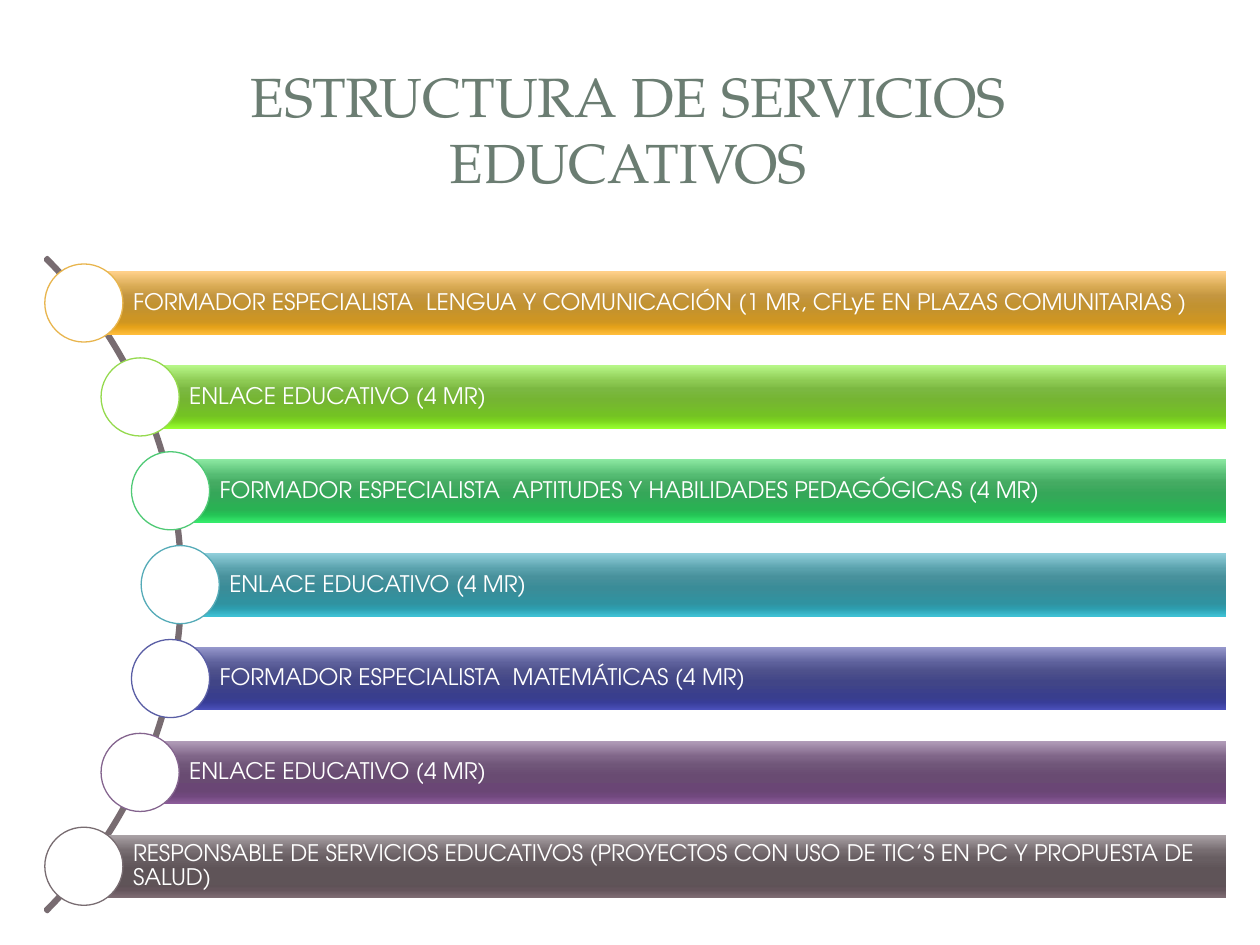
from math import sqrt

from lxml.etree import SubElement
from pptx import Presentation
from pptx.dml.color import RGBColor
from pptx.enum.shapes import MSO_SHAPE as SHAPE
from pptx.enum.text import MSO_ANCHOR as ANCHOR, PP_ALIGN as ALIGN
from pptx.oxml.ns import qn
from pptx.util import Inches, Pt

TITLE_FONT, BODY_FONT = "TeX Gyre Pagella", "TeX Gyre Adventor"
STOPS = (0, 25, 38, 55, 80, 88, 100)
ARC_X, ARC_Y, ARC_R = -2.22, 4.64, 3.67
ROW_R, PITCH = 3.65, 0.745
BAR_H, BAR_RIGHT, DOT = 0.5, 9.73, 0.62
ROWS = [
    ("FORMADOR ESPECIALISTA  LENGUA Y COMUNICACIÓN (1 MR, CFLyE EN PLAZAS COMUNITARIAS )",
     "E8B54D", "FFD08A D7A952 C49640 C29230 CF9621 E4A119 FFBD3B"),
    ("ENLACE EDUCATIVO (4 MR)",
     "95DA4E", "B7F788 8DCA53 7BB841 75B532 74C224 7BD41D 97FF2E"),
    ("FORMADOR ESPECIALISTA  APTITUDES Y HABILIDADES PEDAGÓGICAS (4 MR)",
     "50CA76", "8CE9A2 55BC73 44AB62 35A759 29B253 24C355 35EB6B"),
    ("ENLACE EDUCATIVO (4 MR)",
     "55ABB8", "91CFDB 59A1AC 48919C 3A8C98 3092A0 2D9EAF 3EC0D3"),
    ("FORMADOR ESPECIALISTA  MATEMÁTICAS (4 MR)",
     "5A5EA5", "9698CC 5D609B 4E518C 414587 393E8D 383D99 4A50BA"),
    ("ENLACE EDUCATIVO (4 MR)",
     "84648E", "B39EBA 7F6588 705679 694B72 6A4675 71487E 8C5C9A"),
    ("RESPONSABLE DE SERVICIOS EDUCATIVOS (PROYECTOS CON USO DE TIC’S EN PC Y PROPUESTA DE SALUD)",
     "786C71", "ACA4A8 766C70 685E62 5F5458 5F5257 65555C 7E6C73"),
]


def rgb(value):
    """Turn a hex string into a colour."""
    return RGBColor.from_string(value)


def set_all(obj, values):
    """Set attributes from a dict."""
    for name, value in values.items():
        setattr(obj, name, value)


class Deck:
    """Hold the style and the current slide."""

    def __init__(self, prs):
        """Add a title-only slide."""
        self.s = prs.slides.add_slide(prs.slide_layouts[5])
        self.title_font = {"name": TITLE_FONT, "size": Pt(31.5)}
        self.bar_font = {"name": BODY_FONT, "size": Pt(13)}
        self.bar_frame = {
            "word_wrap": True, "vertical_anchor": ANCHOR.MIDDLE,
            "margin_left": Inches(0.39), "margin_right": Inches(0.04),
            "margin_top": Inches(0.04), "margin_bottom": Inches(0.04)}

    def text(self, tf, text, font, color, para):
        """Fill a frame with one formatted paragraph."""
        p = tf.paragraphs[0]
        set_all(p, para)
        r = p.add_run()
        r.text = text
        set_all(r.font, font)
        r.font.color.rgb = rgb(color)

    def title(self, text, x, y, w, h):
        """Place and fill the title."""
        sp = self.s.shapes.title
        set_all(sp, {"left": Inches(x), "top": Inches(y),
                     "width": Inches(w), "height": Inches(h)})
        sp.text_frame.vertical_anchor = ANCHOR.MIDDLE
        self.text(sp.text_frame, text, self.title_font, "6B7D72",
                  {"alignment": ALIGN.CENTER})

    def shape(self, kind, x, y, w, h, line=None, width=0.75):
        """Add a preset shape without shadow."""
        sp = self.s.shapes.add_shape(kind, Inches(x), Inches(y), Inches(w), Inches(h))
        sp.shadow.inherit = False
        if line:
            sp.line.color.rgb = rgb(line)
            sp.line.width = Pt(width)
        else:
            sp.line.fill.background()
        return sp

    def arc(self, x, y, radius, color):
        """Add the thin arc that links the circles."""
        sp = self.shape(SHAPE.BLOCK_ARC, x - radius, y - radius,
                        2 * radius, 2 * radius, color, 2)
        sp.fill.background()
        for i, value in enumerate((189, 27, 0.003)):
            sp.adjustments[i] = value

    def bar(self, text, x, y, colors):
        """Add a gradient bar with its text."""
        sp = self.shape(SHAPE.RECTANGLE, x, y, BAR_RIGHT - x, BAR_H)
        sp.fill.gradient()
        sp.fill.gradient_angle = 270
        stops = sp._element.spPr.find(".//" + qn("a:gsLst"))
        for stop in list(stops):
            stops.remove(stop)
        for pos, color in zip(STOPS, colors.split()):
            stop = SubElement(stops, qn("a:gs"), pos=str(pos * 1000))
            SubElement(stop, qn("a:srgbClr"), val=color)
        set_all(sp.text_frame, self.bar_frame)
        self.text(sp.text_frame, text, self.bar_font, "FFFFFF",
                  {"alignment": ALIGN.LEFT, "line_spacing": 0.9})

    def circle(self, x, y, color):
        """Add a white circle around a centre."""
        sp = self.shape(SHAPE.OVAL, x - DOT / 2, y - DOT / 2, DOT, DOT, color)
        sp.fill.solid()
        sp.fill.fore_color.rgb = rgb("FFFFFF")


def main():
    """Build and save the slide."""
    prs = Presentation()
    set_all(prs, {"slide_width": Inches(10), "slide_height": Inches(7.5)})
    deck = Deck(prs)
    deck.title("ESTRUCTURA DE SERVICIOS EDUCATIVOS", 0.47, 0.45, 9.03, 1.14)
    deck.arc(ARC_X, ARC_Y, ARC_R, "786C71")
    for i, (text, line, colors) in enumerate(ROWS):
        dy = (i - len(ROWS) // 2) * PITCH
        x, y = ARC_X + sqrt(ROW_R ** 2 - dy ** 2), ARC_Y + dy
        deck.bar(text, x, y - BAR_H / 2, colors)
        deck.circle(x, y, line)
    prs.save("out.pptx")


if __name__ == "__main__":
    main()
